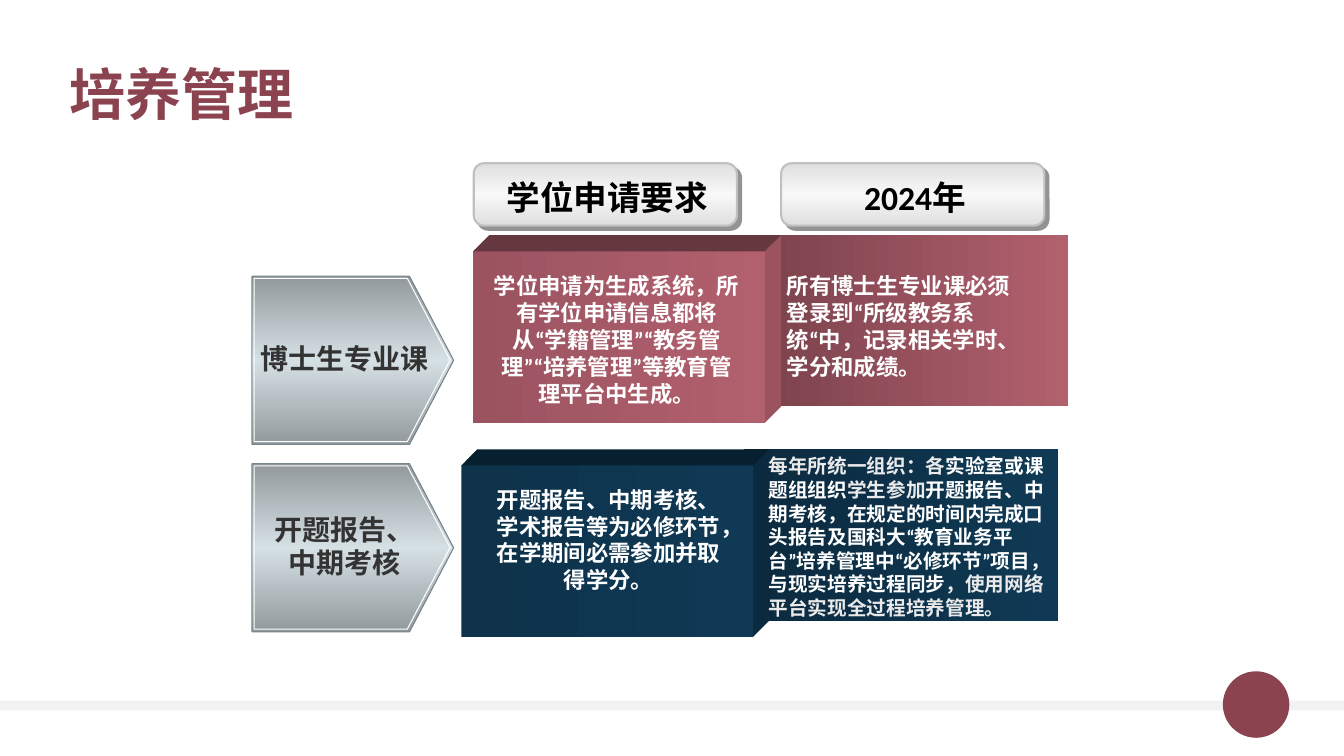
"""Build the slide on training management."""
from dataclasses import dataclass

from lxml import etree
from pptx import Presentation
from pptx import util as u
from pptx.dml import color as c
from pptx.enum import shapes as s, text as t
from pptx.oxml import ns


@dataclass(frozen=True)
class Theme:
    """Colours, fonts and type sizes of the slide."""
    wine: str = "8A434F"
    bar: str = "F2F2F2"
    white: str = "FFFFFF"
    pale: str = "EAEAEA"
    black: str = "000000"
    ink: str = "333333"
    shade: str = "292929"
    rim: str = "C0C0C0"
    edge: str = "76858A"
    silver: tuple = ("DFDFDF", "F8F8F8", "DFDFDF")
    steel: tuple = ("92999C", "D5E0E5", "92999C")
    red: tuple = (("9B5360", "B2606E"), ("7E444E", "B2606E"), "65373F", "9B5360")
    blue: tuple = (("0D324A", "0F3955"), ("0B2A3F", "0F3955"), "06202F", "0B2A3F")
    face: str = "Calibri"
    bold: str = "Noto Sans CJK SC"
    title: int = 40
    head: int = 24
    label: int = 20
    body: int = 16
    small: int = 14


LOOK = Theme()
KIND = s.MSO_SHAPE
MID = t.PP_ALIGN.CENTER


def rgb(code):
    """Return a colour from its hex code."""
    return c.RGBColor.from_string(code)


def apply(item, form):
    """Set each format value on the item."""
    for name, value in form.items():
        setattr(item, name, value)


def glow(node, place, dist, alpha):
    """Insert a hard shadow, cast down and right, in a property node."""
    node.insert(place, etree.fromstring(
        f'<a:effectLst {ns.nsdecls("a")}><a:outerShdw blurRad="0" '
        f'dist="{u.Pt(dist)}" dir="2700000" algn="ctr" rotWithShape="0">'
        f'<a:srgbClr val="{LOOK.shade}"><a:alpha val="{alpha}"/></a:srgbClr>'
        '</a:outerShdw></a:effectLst>'))


def paint(shape, fill, line=None, width=0.75):
    """Fill with a colour or evenly spaced stops, and set the outline."""
    shape.shadow.inherit = False
    if fill is None:
        shape.fill.background()
    elif isinstance(fill, str):
        shape.fill.solid()
        shape.fill.fore_color.rgb = rgb(fill)
    else:
        shape.fill.gradient()
        shape.fill.gradient_angle = 90 if len(fill) > 2 else 0
        stops = next(shape.element.iter(ns.qn("a:gsLst")))
        stops.clear()
        for i, code in enumerate(fill):
            stop = etree.SubElement(stops, ns.qn("a:gs"),
                                    pos=str(100000 * i // (len(fill) - 1)))
            etree.SubElement(stop, ns.qn("a:srgbClr"), val=code)
    if line:
        shape.line.color.rgb = rgb(line)
        shape.line.width = u.Pt(width)
    else:
        shape.line.fill.background()


def draw(slide, kind, box, fill, line=None, width=0.75):
    """Add a preset shape in a box given in points."""
    shape = slide.shapes.add_shape(kind, *map(u.Pt, box))
    paint(shape, fill, line, width)
    return shape


def outline(slide, points, fill):
    """Add a closed polygon through points."""
    first, *rest = [(u.Pt(x), u.Pt(y)) for x, y in points]
    pen = slide.shapes.build_freeform(*first)
    pen.add_line_segments(rest, close=True)
    paint(pen.convert_to_shape(), fill)


def style(run, size, tone, face):
    """Format one run, with the face also set for Chinese."""
    apply(run.font, {"size": u.Pt(size), "bold": True, "name": face})
    run.font.color.rgb = rgb(tone)
    latin = next(run.font._element.iter(ns.qn("a:latin")))
    latin.addnext(etree.Element(ns.qn("a:ea"), typeface=face))


def write(slide, box, paras, size, align=None, shadow=False,
          anchor=t.MSO_ANCHOR.TOP):
    """Add wrapped text, each paragraph a list of (words, colour) runs."""
    frame = slide.shapes.add_textbox(*map(u.Pt, box)).text_frame
    apply(frame, {"word_wrap": True, "vertical_anchor": anchor})
    for i, runs in enumerate(paras):
        para = frame.add_paragraph() if i else frame.paragraphs[0]
        para.alignment = align
        for words, tone in runs:
            run = para.add_run()
            run.text = words
            style(run, size, tone, LOOK.face)
            if shadow:
                glow(run.font._element, 1, 1.5, 40000)


def title(slide, box, words):
    """Place the slide title."""
    shape = slide.shapes.title
    apply(shape, dict(zip(("left", "top", "width", "height"), map(u.Pt, box))))
    frame = shape.text_frame
    apply(frame, {"margin_left": 0, "vertical_anchor": t.MSO_ANCHOR.TOP})
    para = frame.paragraphs[0]
    apply(para, {"alignment": t.PP_ALIGN.LEFT, "line_spacing": 0.9})
    run = para.add_run()
    run.text = words
    style(run, LOOK.title, LOOK.wine, LOOK.bold)


def header(slide, box, words):
    """Draw a silver column header."""
    x, y, w, h = box
    pill = draw(slide, KIND.ROUNDED_RECTANGLE, box, LOOK.silver, LOOK.rim, 1.5)
    pill.shadow.inherit = True
    glow(pill.element.spPr, len(pill.element.spPr), 4.2, 50000)
    write(slide, (x + 7, y + 6, 177, 36), [[(words, LOOK.black)]],
          LOOK.head, MID, True)


def plate(slide, box, lines):
    """Draw a steel arrow plate with a white inner rim and a label."""
    x, y, w, h = box
    inner = (x + 1.5, y + 1.5, w - 4, h - 3.5)
    for area, fill, line in ((box, LOOK.steel, LOOK.edge),
                             (inner, None, LOOK.white)):
        draw(slide, KIND.PENTAGON, area, fill, line).adjustments[0] = 0.262
    write(slide, (x - 6, y, w, h - 3), [[(words, LOOK.ink)] for words in lines],
          LOOK.label, MID, True, t.MSO_ANCHOR.MIDDLE)


def block(slide, box, back, tones, notes):
    """Draw a raised block before a flat panel, with text at offsets."""
    x, y, w, h = box
    front, panel, top, side = tones
    deep, wide = 11.5, 208.5
    draw(slide, KIND.RECTANGLE, (x + back, y, w - back, h), panel)
    draw(slide, KIND.RECTANGLE, (x, y + deep, wide, h), front)
    near, far = x + wide, x + wide + deep
    outline(slide, [(x, y + deep), (x + deep, y), (far, y), (near, y + deep)], top)
    outline(slide, [(near, y + deep), (far, y), (far, y + h),
                    (near, y + h + deep)], side)
    for (dx, dy, tw, th), runs, size, align in notes:
        write(slide, (x + dx, y + dy, tw, th), [runs], size, align)


def foot(slide, box):
    """Draw the footer strip and its disc."""
    x, y, w, h = box
    draw(slide, KIND.RECTANGLE, box, LOOK.bar)
    draw(slide, KIND.OVAL, (x + 873.5, y - 21, 47.5, 47.5), LOOK.wine)


def main():
    """Build and save the slide."""
    deck = Presentation()
    apply(deck, {"slide_width": u.Pt(960), "slide_height": u.Pt(540)})
    slide = deck.slides.add_slide(deck.slide_layouts[5])
    foot(slide, (0, 500.5, 960, 7))
    title(slide, (49.7, 44, 852, 65.5), "培养管理")
    for i, words in enumerate(("学位申请要求", "2024年")):
        header(slide, (338.4 + 219.6 * i, 116.6, 188, 44.6), words)
    for i, lines in enumerate((["博士生专业课"], ["开题报告、", "中期考核"])):
        plate(slide, (180, 197.3 + 133.9 * i, 144, 120.2), lines)
    white, pale = LOOK.white, LOOK.pale
    block(slide, (338, 168, 425, 122.4), 215.5, LOOK.red, [
        ((6, 23, 193, 104.5), [("学位申请为生成系统，所有学位申请信息都将从“学籍管理”“教务管理”“培养管理”等教育管理平台中生成。", white)],
         LOOK.body, MID),
        ((217, 23, 186, 85), [("所有博士生专业课必须登录到“所级教务系统“中，记录相关学时、学分和成绩。", white)],
         LOOK.body, None)])
    block(slide, (329.5, 321, 426.5, 122.4), 202, LOOK.blue, [
        ((14.5, 22.5, 181.5, 85), [("开题报告、中期考核、学术报告等为必修环节，在学期间必需参加并取得学分。", white)],
         LOOK.body, MID),
        ((212.5, 0, 221, 126), [
            ("每年所统一组织：各", pale), ("实验室或课题组组织", white),
            ("学生参加", pale),
            ("开题报告、中期考核，在规定的时间内完成口头报告及国科大“教育业务平台”培养管理中“必修环节”项目，与现实培养过程同步", white),
            ("，使用网络平台实现全过程培养管理。", pale)], LOOK.small, None)])
    deck.save("out.pptx")


if __name__ == "__main__":
    main()
